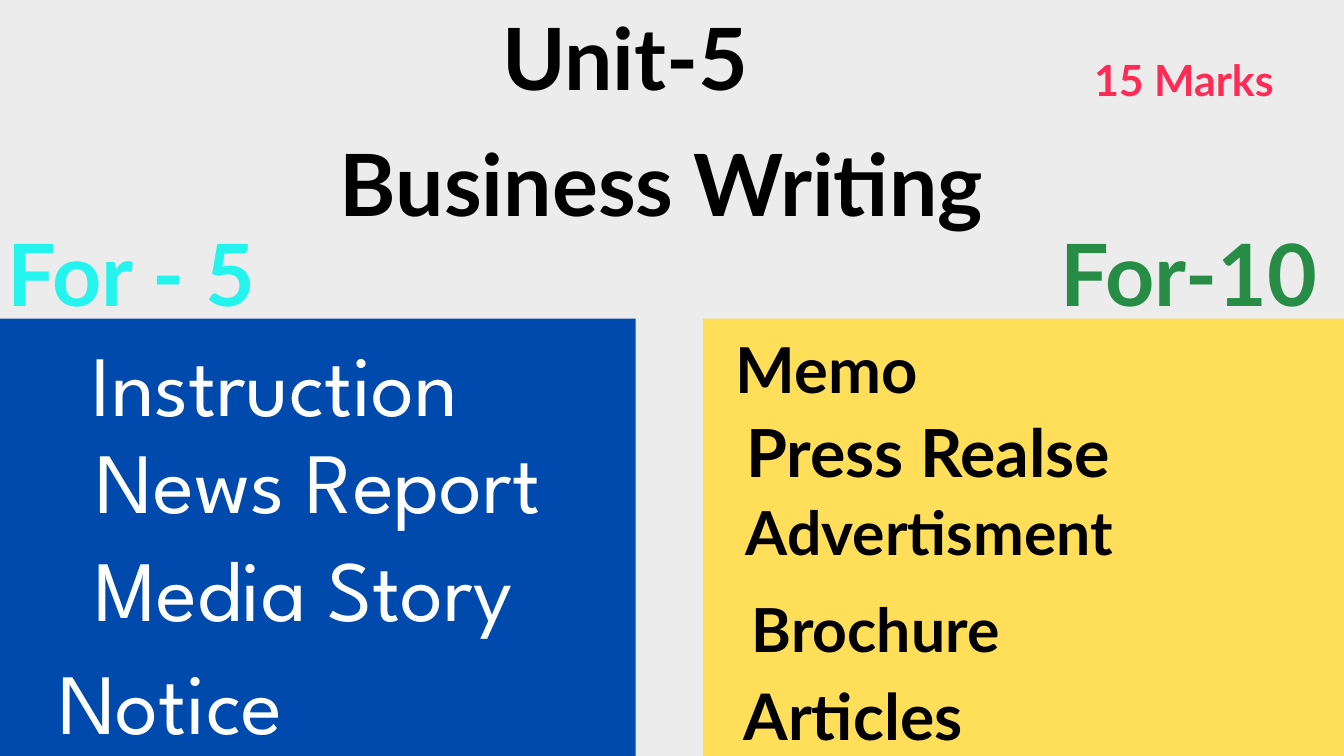
from pptx import Presentation, util as u
from pptx.dml.color import RGBColor
from pptx.enum import shapes, text

COLS, ROWS = 20, 11.25
LEAD = 1.4
DEEP = 0.0186


def hue(code):
    """Turn a hex string into a colour."""
    return RGBColor.from_string(code)


def write(frame, words, size=92, font="Lato", color="000000", bold=True):
    """Fill a text frame with one centred line."""
    frame.margin_left = frame.margin_right = 0
    frame.margin_top = frame.margin_bottom = 0
    frame.word_wrap = True
    frame.auto_size = text.MSO_AUTO_SIZE.NONE
    frame.vertical_anchor = text.MSO_ANCHOR.TOP
    para = frame.paragraphs[0]
    para.alignment = text.PP_ALIGN.CENTER
    para.line_spacing = u.Pt(LEAD * size)
    para.space_before = para.space_after = u.Pt(0)
    run = para.add_run()
    run.text = words
    run.font.size, run.font.name, run.font.bold = u.Pt(size), font, bold
    run.font.color.rgb = hue(color)


class Deck:
    """Hold the style and the current slide on a grid of cells."""

    def __init__(self, back):
        """Open a deck with one title-only slide."""
        self.prs = Presentation()
        self.prs.slide_width = u.Inches(COLS)
        self.prs.slide_height = u.Inches(ROWS)
        self.slide = self.prs.slides.add_slide(self.prs.slide_layouts[5])
        fill = self.slide.background.fill
        fill.solid()
        fill.fore_color.rgb = hue(back)

    def cell(self, *spans):
        """Turn columns and rows into slide lengths."""
        wide = self.prs.slide_width / COLS
        return [int(span * wide) for span in spans]

    def panel(self, col, row, wide, high, color):
        """Draw a plain colour panel."""
        box = self.slide.shapes.add_shape(
            shapes.MSO_SHAPE.RECTANGLE, *self.cell(col, row, wide, high))
        box.shadow.inherit = False
        box.fill.solid()
        box.fill.fore_color.rgb = hue(color)
        box.line.fill.background()

    def title(self, words, col, row, wide, size=92):
        """Place the slide title."""
        head = self.slide.shapes.title
        head.left, head.top, head.width, head.height = self.cell(
            col, row, wide, size * DEEP)
        write(head.text_frame, words, size=size)

    def label(self, words, col, row, wide, size=92, high=None, **style):
        """Place a line of text."""
        box = self.slide.shapes.add_textbox(
            *self.cell(col, row, wide, high or size * DEEP))
        write(box.text_frame, words, size=size, **style)


def main():
    """Build the unit slide."""
    deck = Deck("EDECED")
    deck.panel(-1.77, 4.74, 11.23, 7.58, "004AAD")
    deck.panel(10.46, 4.74, 11.5, 9.41, "FFDE59")

    deck.label("Unit-5 ", 7.36, -0.19, 4.2)
    deck.title("Business Writing ", 4.68, 1.69, 10.64)
    deck.label("15 Marks ", 16.24, 0.67, 2.91, size=46, color="FE2C55")
    deck.label("For - 5 ", 0, 3.03, 4.22, color="25F4EE")
    deck.label("For-10", 15.7, 3.03, 3.99, color="278D46")

    for words, col, row, wide in (
            ("Instruction ", 0.56, 4.67, 7.38),
            ("News Report ", 0.53, 6.11, 8.73),
            ("Media Story", -0.42, 7.72, 9.87),
            ("Notice", -1.61, 9.4, 8.29)):
        deck.label(words, col, row, wide, font="League Spartan",
                   color="FFFFFF", bold=False)

    for words, col, row, wide, size, high in (
            ("Memo", 10.86, 4.73, 2.88, 67.8, None),
            ("Press Realse ", 10.83, 5.92, 6.21, 71, None),
            ("Advertisment ", 10.82, 7.19, 6.25, 65, None),
            ("Brochure ", 10.3, 8.62, 5.68, 65, None),
            ("Articles", 9.69, 9.87, 6.01, 68.7, 2.62)):
        deck.label(words, col, row, wide, size=size, high=high)

    deck.prs.save("out.pptx")


if __name__ == "__main__":
    main()
